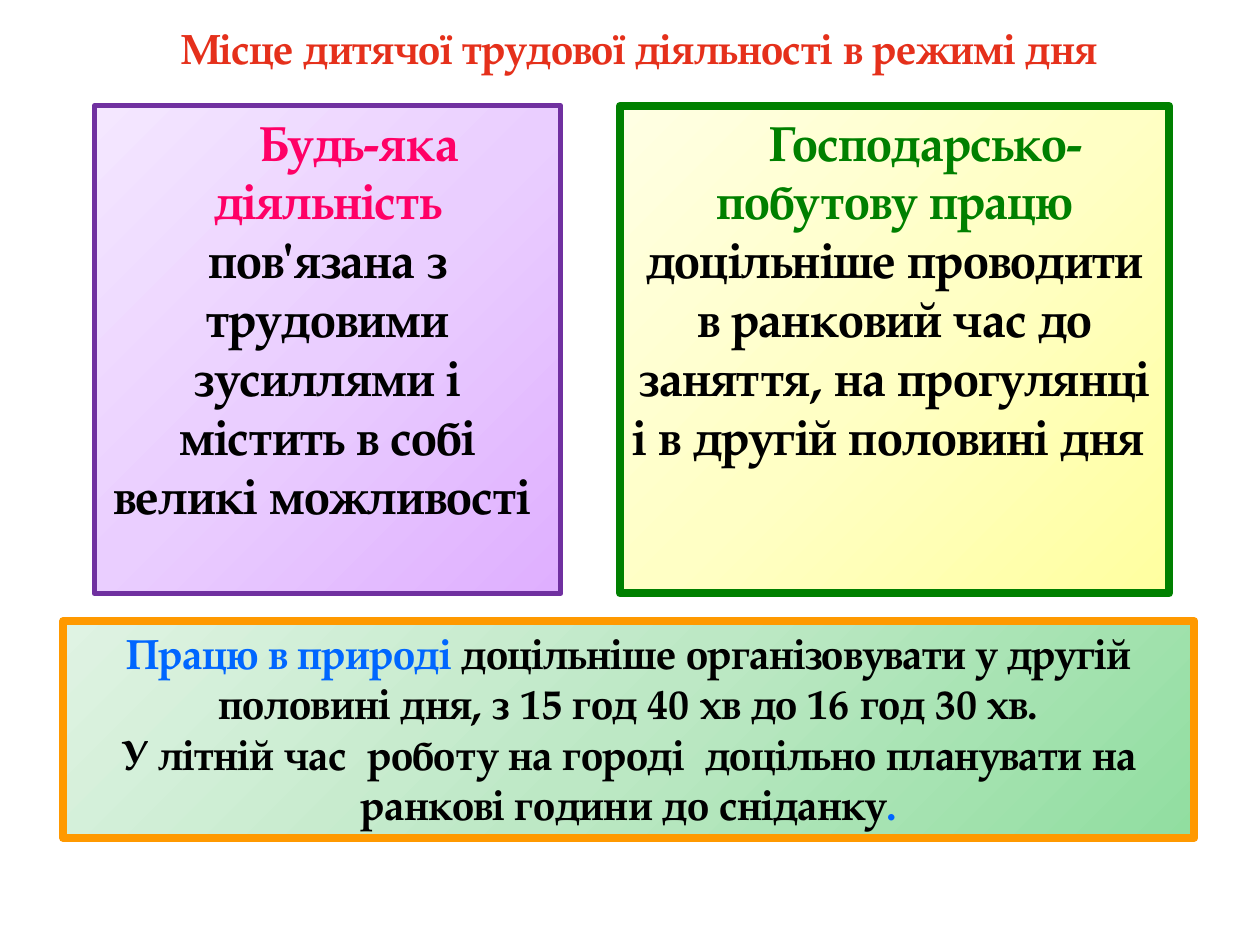
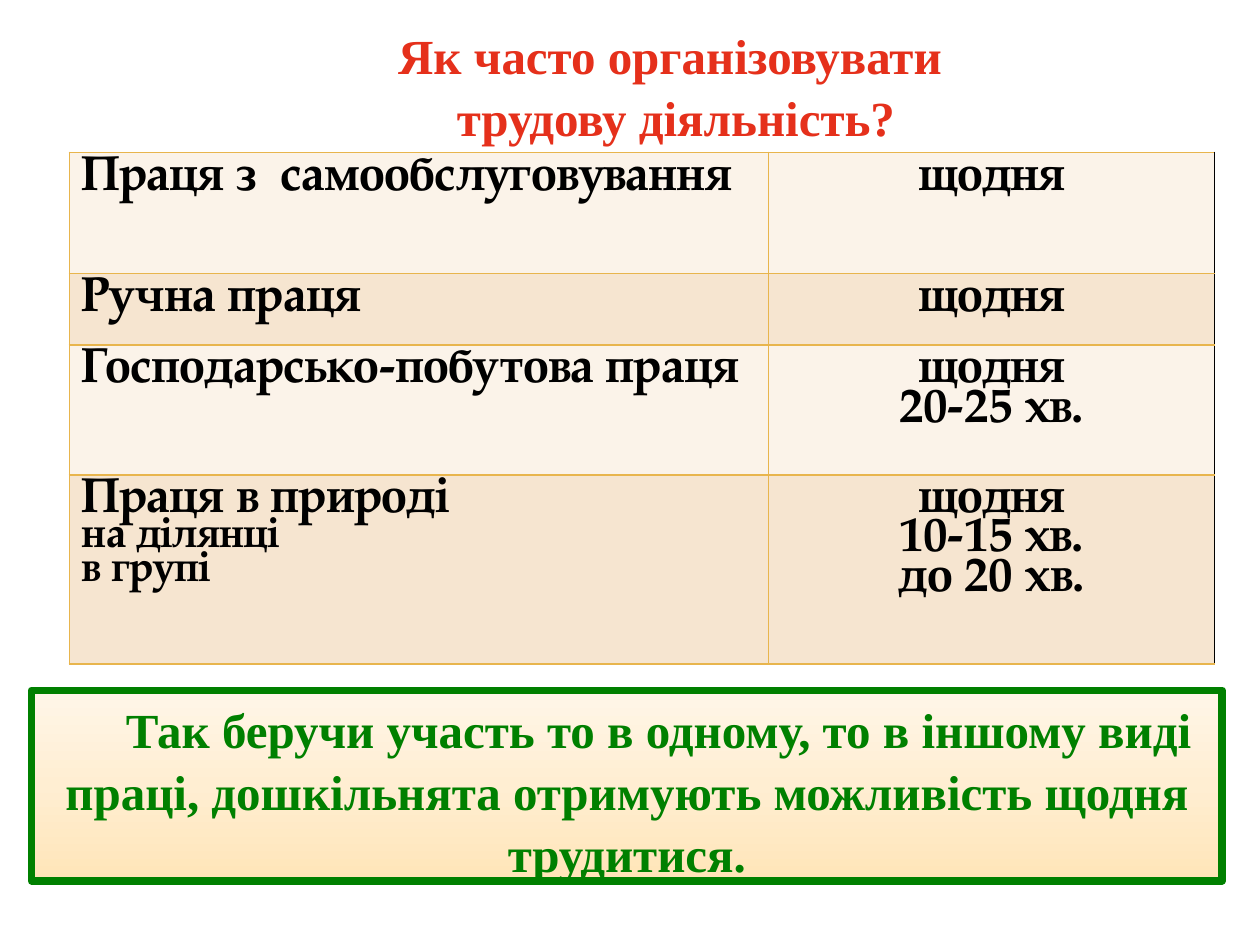
from copy import deepcopy
from dataclasses import dataclass

from lxml import etree
from pptx import Presentation
from pptx import util as u
from pptx.dml.color import RGBColor
from pptx.enum import shapes, text
from pptx.oxml.ns import qn


@dataclass(frozen=True)
class Theme:
    pagella: str = "TeX Gyre Pagella"
    times: str = "Times New Roman"
    large: int = 28
    medium: int = 24
    black: str = "000000"
    red: str = "E5301B"
    pink: str = "FF0066"
    blue: str = "0066FF"
    green: str = "008000"
    purple: str = "7030A0"
    orange: str = "FF9900"
    grid: str = "E8B54D"
    bands: tuple = ("FBF3E9", "F6E5D0")
    lilac: tuple = ("DFAFFF", "EACEFF", "F4E7FF")
    mint: tuple = ("91DEA0", "BDE8C5", "DFF3E3")
    lemon: tuple = ("FFFFA0", "FFFFC5", "FFFFE3")
    peach: tuple = ("FFE5B8", "FFEED2", "FFF6E8")


T = Theme()
CENTER = text.PP_ALIGN.CENTER
DIAGONAL, UPWARD = 135, 90  # counter-clockwise gradient angles


def apply(target, settings):
    for name, value in settings.items():
        setattr(target, name, value)


def inches(box):
    return [u.Inches(value) for value in box]


def write(frame, paragraphs, font, size, align=CENTER, spacing=None, indent=0):
    """Each paragraph is a list of (words, colour) or (words, colour, size) runs."""
    apply(frame, {"word_wrap": True, "vertical_anchor": text.MSO_ANCHOR.TOP})
    for i, runs in enumerate(paragraphs):
        paragraph = frame.add_paragraph() if i else frame.paragraphs[0]
        apply(paragraph, {"alignment": align, "line_spacing": spacing})
        if indent:
            paragraph._p.get_or_add_pPr().set("indent", str(u.Inches(indent)))
        for words, colour, *own_size in runs:
            run = paragraph.add_run()
            run.text = words
            run_size = own_size[0] if own_size else size
            apply(run.font, {"name": font, "size": u.Pt(run_size), "bold": True})
            run.font.color.rgb = RGBColor.from_string(colour)


def title(slide, box, paragraphs, **style):
    heading = slide.shapes.add_textbox(*inches(box))
    write(heading.text_frame, paragraphs, **style)


def gradient(shape, colours, angle):
    shape.fill.gradient()
    shape.fill.gradient_angle = angle
    first_stop = shape._element.spPr.find(".//" + qn("a:gs"))
    first_stop.addnext(deepcopy(first_stop))
    for i, (stop, colour) in enumerate(zip(shape.fill.gradient_stops, colours)):
        stop.position = i / 2
        stop.color.rgb = RGBColor.from_string(colour)


def panel(slide, box, colours, angle, border, width, paragraphs, **style):
    card = slide.shapes.add_shape(shapes.MSO_SHAPE.RECTANGLE, *inches(box))
    card.shadow.inherit = False
    gradient(card, colours, angle)
    card.line.color.rgb = RGBColor.from_string(border)
    card.line.width = u.Pt(width)
    write(card.text_frame, paragraphs, **style)


def cell_borders(cell, right):
    properties = cell._tc.get_or_add_tcPr()
    sides = {"lnL": T.grid, "lnR": right, "lnT": T.grid, "lnB": T.grid}
    for i, (side, colour) in enumerate(sides.items()):
        line = etree.Element(qn(f"a:{side}"), w=str(u.Pt(1)))
        fill = etree.SubElement(line, qn("a:solidFill"))
        etree.SubElement(fill, qn("a:srgbClr"), val=colour)
        properties.insert(i, line)


def frequency_table(slide, box, column_widths, row_heights, rows):
    table = slide.shapes.add_table(len(rows), len(column_widths), *inches(box)).table
    apply(table, {"first_row": False, "horz_banding": False})
    for column, width in zip(table.columns, column_widths):
        column.width = u.Inches(width)
    for r, (height, labour) in enumerate(zip(row_heights, rows)):
        table.rows[r].height = u.Inches(height)
        for c, lines in enumerate(labour):
            cell = table.cell(r, c)
            cell.fill.solid()
            cell.fill.fore_color.rgb = RGBColor.from_string(T.bands[r % 2])
            cell.vertical_anchor = text.MSO_ANCHOR.TOP
            # Only the details under a kind of labour are smaller
            paragraphs = [[(words, T.black, T.medium if i and c == 0 else T.large)]
                          for i, words in enumerate(lines)]
            write(cell.text_frame, paragraphs, T.pagella, T.large,
                  align=CENTER if c else text.PP_ALIGN.LEFT, spacing=0.82)
            cell_borders(cell, right=T.black if c else T.grid)


def daily_routine(slide):
    small = {"font": T.pagella, "size": T.medium}
    large = {"font": T.pagella, "size": T.large, "indent": 0.5}
    title(slide, (0.51, 0.13, 9.13, 0.5),
          [[("Місце дитячої трудової діяльності в режимі дня", T.red)]], **small)
    # Any activity
    panel(slide, (0.75, 0.84, 3.7, 3.87), T.lilac, DIAGONAL, T.purple, 3,
          [[("Будь-яка діяльність ", T.pink),
            ("пов'язана з трудовими зусиллями і містить в собі великі можливості ",
             T.black)]], **large)
    # Labour in nature
    panel(slide, (0.5, 4.93, 8.98, 1.72), T.mint, DIAGONAL, T.orange, 4.5,
          [[("Працю в природі ", T.blue),
            ("доцільніше організовувати у другій половині дня, "
             "з 15 год 40 хв до 16 год 30 хв.", T.black)],
           [("У літній час  роботу на городі  доцільно планувати на ранкові "
             "години до сніданку", T.black), (".", T.blue)]], **small)
    # Household labour
    panel(slide, (4.92, 0.84, 4.36, 3.87), T.lemon, DIAGONAL, T.green, 4.5,
          [[("Господарсько-побутову працю ", T.green),
            ("доцільніше проводити в ранковий час до заняття, на прогулянці "
             "і в другій половині дня ", T.black)]], **large)


def labour_frequency(slide):
    style = {"font": T.times, "size": T.large, "indent": 0.5, "spacing": 1.05}
    # Conclusion
    panel(slide, (0.25, 5.48, 9.45, 1.51), T.peach, UPWARD, T.green, 4.5,
          [[("Так беручи участь то в одному, то в іншому виді праці, дошкільнята "
             "отримують можливість щодня трудитися.", T.green)]], **style)
    title(slide, (0.51, 0.13, 9.21, 1.04),
          [[("Як часто організовувати ", T.red)],
           [("трудову діяльність?", T.red)]], **style)
    # Kinds of labour and how often each takes place
    frequency_table(slide, (0.55, 1.21, 9.1, 4.06), (5.55, 3.54),
                    (0.96, 0.57, 1.03, 1.5),
                    [(["Праця з  самообслуговування"], ["щодня"]),
                     (["Ручна праця"], ["щодня"]),
                     (["Господарсько-побутова праця"], ["щодня", "20-25 хв."]),
                     (["Праця в природі", "на ділянці", "в групі"],
                      ["щодня", "10-15 хв.", "до 20 хв."])])


def main():
    deck = Presentation()
    apply(deck, {"slide_width": u.Inches(10), "slide_height": u.Inches(7.5)})
    for build in (daily_routine, labour_frequency):
        build(deck.slides.add_slide(deck.slide_layouts[6]))
    deck.save("out.pptx")


if __name__ == "__main__":
    main()
